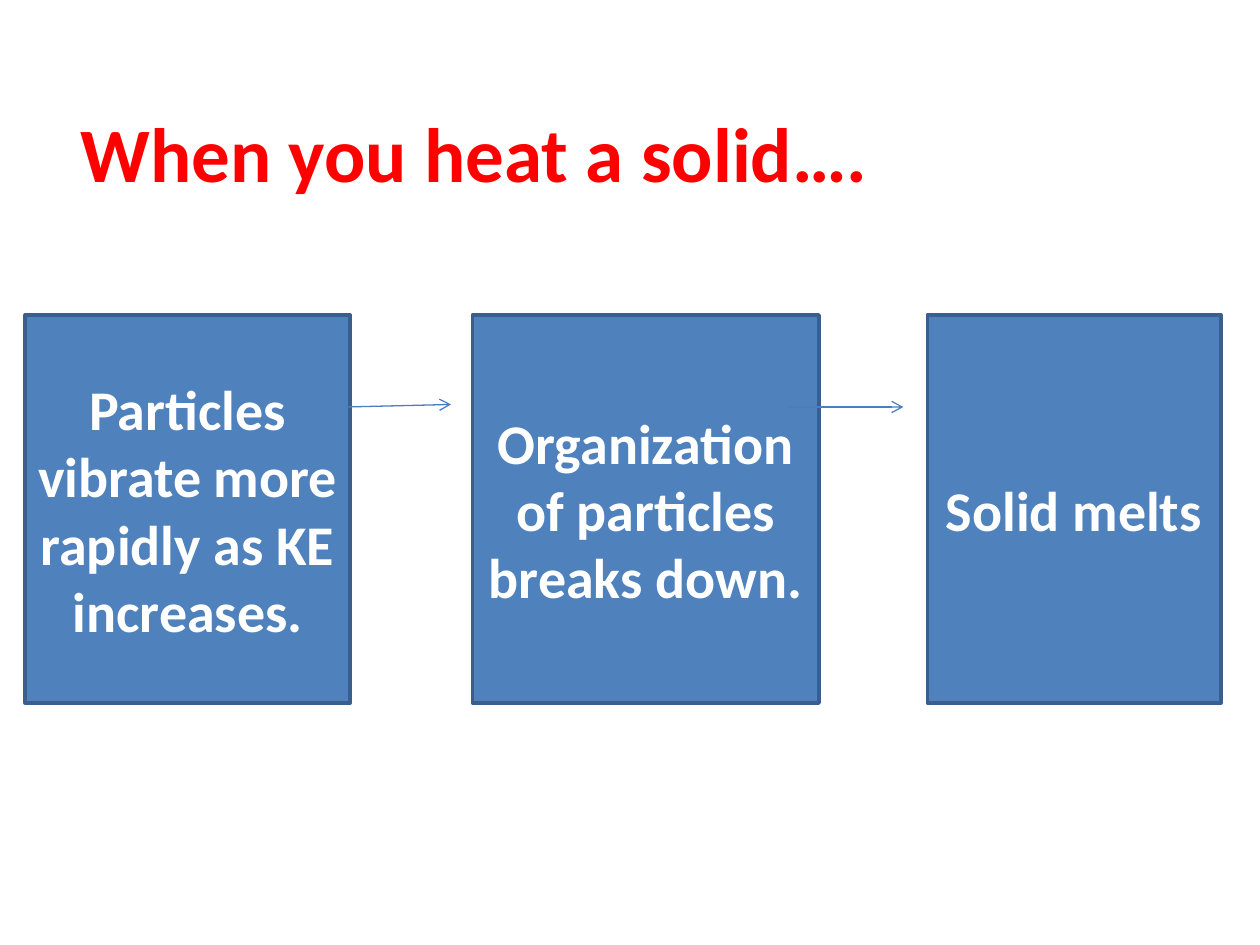
from lxml.etree import SubElement
from pptx import Presentation
from pptx.dml.color import RGBColor
from pptx.enum.shapes import MSO_CONNECTOR, MSO_SHAPE
from pptx.enum.text import MSO_ANCHOR, PP_ALIGN
from pptx.oxml.ns import qn
from pptx.util import Inches, Pt

BOX_TOP, BOX_HEIGHT = 2.5, 3.08
STEPS = [
    (0.2, 2.58, "Particles vibrate more rapidly as KE increases."),
    (3.75, 2.75, "Organization of particles breaks down."),
    (7.36, 2.33, "Solid melts"),
]
ARROWS = [((2.75, 3.23), (3.58, 3.21)), ((6.25, 3.23), (7.17, 3.23))]
TITLE_FONT = {"name": "Calibri", "size": Pt(44), "bold": True}
STEP_FONT = {"name": "Calibri", "size": Pt(32), "bold": True}


def color(hex_string):
    return RGBColor.from_string(hex_string)


def write_text(shape, text, font_format, font_color, alignment):
    frame = shape.text_frame
    frame.word_wrap = True
    frame.vertical_anchor = MSO_ANCHOR.MIDDLE
    paragraph = frame.paragraphs[0]
    paragraph.alignment = alignment
    run = paragraph.add_run()
    run.text = text
    for name, value in font_format.items():
        setattr(run.font, name, value)
    run.font.color.rgb = color(font_color)


def add_title(slide, text):
    box = slide.shapes.add_textbox(Inches(0.54), Inches(0.58), Inches(9), Inches(1.25))
    write_text(box, text, TITLE_FONT, "FF0000", PP_ALIGN.LEFT)


def add_step(slide, left, width, text):
    shape = slide.shapes.add_shape(
        MSO_SHAPE.RECTANGLE, Inches(left), Inches(BOX_TOP), Inches(width), Inches(BOX_HEIGHT)
    )
    shape.shadow.inherit = False
    shape.fill.solid()
    shape.fill.fore_color.rgb = color("4F81BD")
    shape.line.color.rgb = color("3A5F8C")
    shape.line.width = Pt(2)
    write_text(shape, text, STEP_FONT, "FFFFFF", PP_ALIGN.CENTER)


def add_arrow(slide, start, end):
    points = [Inches(value) for value in (*start, *end)]
    connector = slide.shapes.add_connector(MSO_CONNECTOR.STRAIGHT, *points)
    connector.line.color.rgb = color("4B7EBC")
    connector.line.width = Pt(0.75)
    SubElement(connector.line._get_or_add_ln(), qn("a:tailEnd"), type="arrow")
    SubElement(connector._element.spPr, qn("a:effectLst"))


def main():
    presentation = Presentation()
    presentation.slide_width = Inches(10)
    presentation.slide_height = Inches(7.5)
    slide = presentation.slides.add_slide(presentation.slide_layouts[6])
    add_title(slide, "When you heat a solid….")
    for step in STEPS:
        add_step(slide, *step)
    for start, end in ARROWS:
        add_arrow(slide, start, end)
    presentation.save("out.pptx")


if __name__ == "__main__":
    main()
